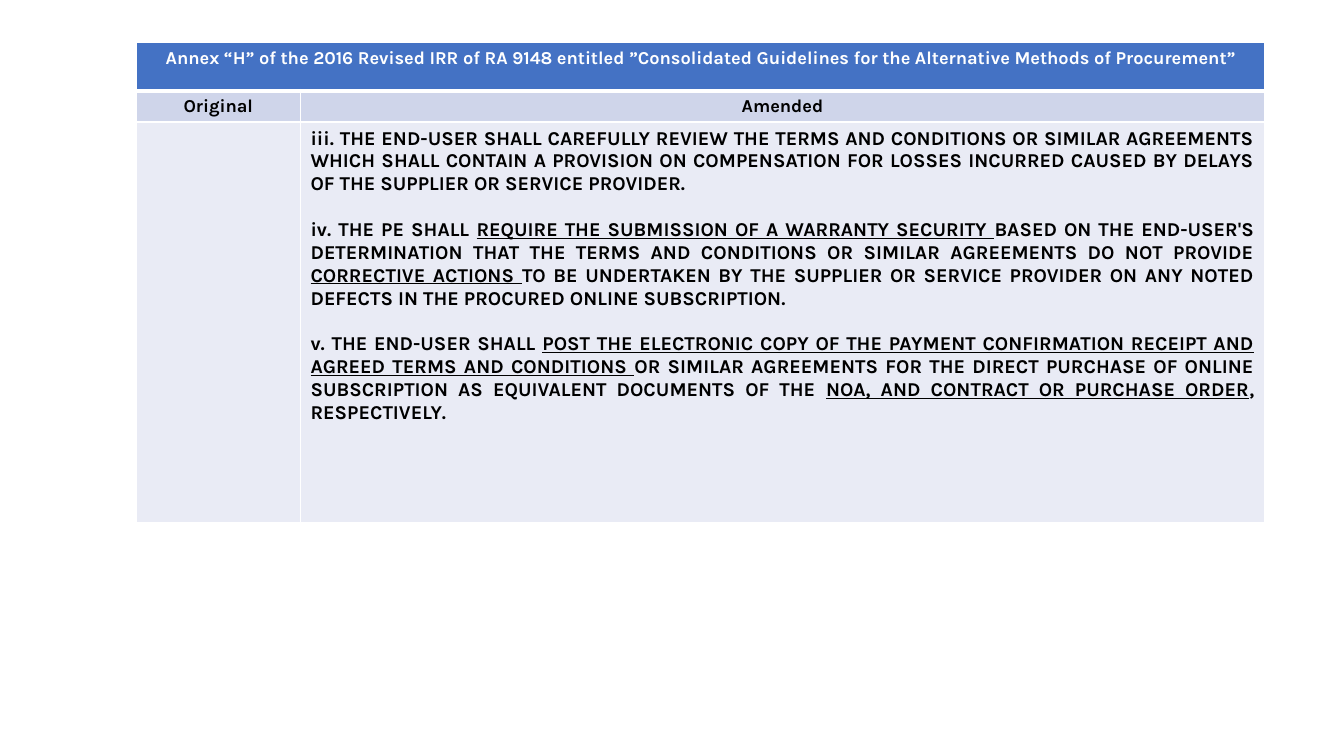
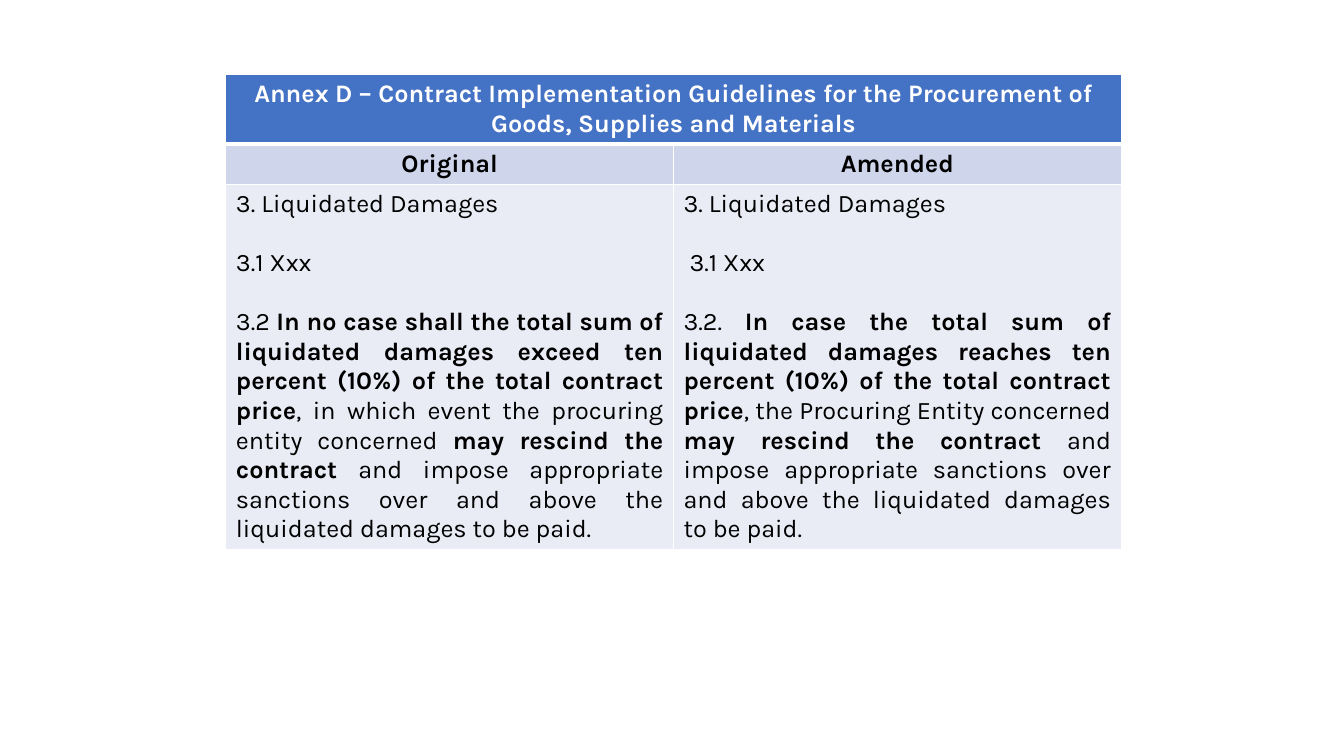
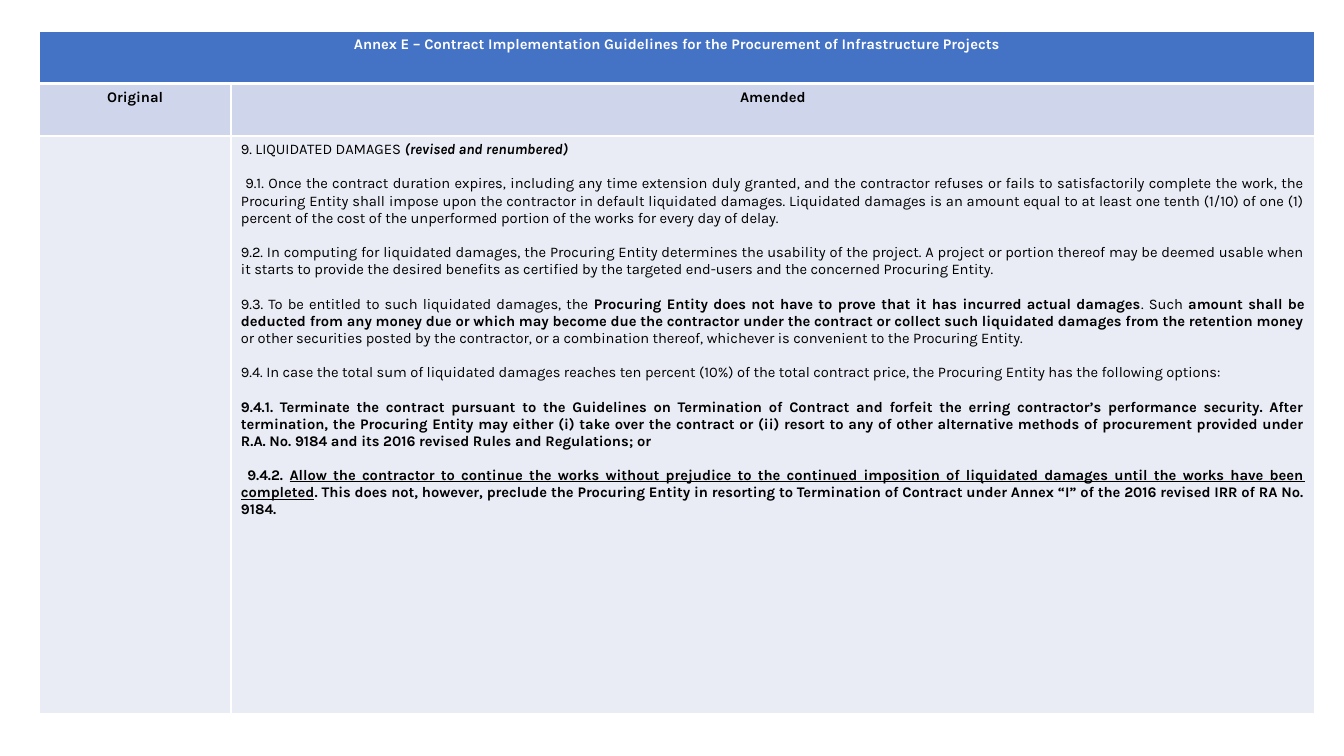
import pptx
import pptx.dml.color
import pptx.enum.text
import pptx.oxml
import pptx.oxml.ns
import pptx.util

Inches = pptx.util.Inches
Pt = pptx.util.Pt
RGBColor = pptx.dml.color.RGBColor
PP_ALIGN = pptx.enum.text.PP_ALIGN

WHITE = RGBColor(0xFF, 0xFF, 0xFF)
BLACK = RGBColor(0x00, 0x00, 0x00)
BANNER_BLUE = RGBColor(0x44, 0x72, 0xC4)
HEADING_BLUE = RGBColor(0xCF, 0xD5, 0xEA)
BODY_BLUE = RGBColor(0xE9, 0xEB, 0xF5)
FONT = "Karla"
LINE_HEIGHT = 1.17
THIN, THICK = 1, 3

ONLINE_SUBSCRIPTION = [
    [("iii. THE END-USER SHALL CAREFULLY REVIEW THE TERMS AND CONDITIONS OR SIMILAR AGREEMENTS "
      "WHICH SHALL CONTAIN A PROVISION ON COMPENSATION FOR LOSSES INCURRED CAUSED BY DELAYS "
      "OF THE SUPPLIER OR SERVICE PROVIDER.", "b")],
    [("iv. THE PE SHALL ", "b"),
     ("REQUIRE THE SUBMISSION OF A WARRANTY SECURITY ", "bu"),
     ("BASED ON THE END-USER'S DETERMINATION THAT THE TERMS AND CONDITIONS OR SIMILAR "
      "AGREEMENTS DO NOT PROVIDE ", "b"),
     ("CORRECTIVE ACTIONS ", "bu"),
     ("TO BE UNDERTAKEN BY THE SUPPLIER OR SERVICE PROVIDER ON ANY NOTED DEFECTS IN THE "
      "PROCURED ONLINE SUBSCRIPTION.", "b")],
    [("v. THE END-USER SHALL ", "b"),
     ("POST THE ELECTRONIC COPY OF THE PAYMENT CONFIRMATION RECEIPT AND AGREED TERMS AND "
      "CONDITIONS ", "bu"),
     ("OR SIMILAR AGREEMENTS FOR THE DIRECT PURCHASE OF ONLINE SUBSCRIPTION AS EQUIVALENT "
      "DOCUMENTS OF THE ", "b"),
     ("NOA, AND CONTRACT OR PURCHASE ORDER", "bu"),
     (", RESPECTIVELY.", "b")],
]

GOODS_ORIGINAL = [
    [("3. Liquidated Damages", "")],
    [("3.1 Xxx", "")],
    [("3.2 ", ""),
     ("In no case shall the total sum of liquidated damages exceed ten percent (10%) of the "
      "total contract price", "b"),
     (", in which event the procuring entity concerned ", ""),
     ("may rescind the contract ", "b"),
     ("and impose appropriate sanctions over and above the liquidated damages to be paid.", "")],
]

GOODS_AMENDED = [
    [("3. Liquidated Damages", "")],
    [(" 3.1 Xxx", "")],
    [("3.2. ", ""),
     ("In case the total sum of liquidated damages reaches ten percent (10%) of the total "
      "contract price", "b"),
     (", the Procuring Entity concerned ", ""),
     ("may rescind the contract ", "b"),
     ("and impose appropriate sanctions over and above the liquidated damages to be paid.", "")],
]

INFRASTRUCTURE_AMENDED = [
    [("9. LIQUIDATED DAMAGES ", ""), ("(revised and renumbered)", "bi")],
    [(" 9.1. Once the contract duration expires, including any time extension duly granted, and "
      "the contractor refuses or fails to satisfactorily complete the work, the Procuring Entity "
      "shall impose upon the contractor in default liquidated damages. Liquidated damages is an "
      "amount equal to at least one tenth (1/10) of one (1) percent of the cost of the "
      "unperformed portion of the works for every day of delay.", "")],
    [("9.2. In computing for liquidated damages, the Procuring Entity determines the usability "
      "of the project. A project or portion thereof may be deemed usable when it starts to "
      "provide the desired benefits as certified by the targeted end-users and the concerned "
      "Procuring Entity.", "")],
    [("9.3. To be entitled to such liquidated damages, the ", ""),
     ("Procuring Entity does not have to prove that it has incurred actual damages", "b"),
     (". Such ", ""),
     ("amount shall be deducted from any money due or which may become due the contractor under "
      "the contract or collect such liquidated damages from the retention money ", "b"),
     ("or other securities posted by the contractor, or a combination thereof, whichever is "
      "convenient to the Procuring Entity.", "")],
    [("9.4. In case the total sum of liquidated damages reaches ten percent (10%) of the total "
      "contract price, the Procuring Entity has the following options:", "")],
    [("9.4.1. Terminate the contract pursuant to the Guidelines on Termination of Contract and "
      "forfeit the erring contractor’s performance security. After termination, the Procuring "
      "Entity may either (i) take over the contract or (ii) resort to any of other alternative "
      "methods of procurement provided under R.A. No. 9184 and its 2016 revised Rules and "
      "Regulations; or", "b")],
    [(" 9.4.2. ", "b"),
     ("Allow the contractor to continue the works without prejudice to the continued imposition "
      "of liquidated damages until the works have been completed", "bu"),
     (". This does not, however, preclude the Procuring Entity in resorting to Termination of "
      "Contract under Annex “I” of the 2016 revised IRR of RA No. 9184.", "b")],
]


def set_borders(cell, top, bottom):
    properties = cell._tc.get_or_add_tcPr()
    for side, width in (("L", THIN), ("R", THIN), ("T", top), ("B", bottom)):
        properties.append(pptx.oxml.parse_xml(
            f'<a:ln{side} {pptx.oxml.ns.nsdecls("a")} w="{Pt(width)}">'
            f'<a:solidFill><a:srgbClr val="{WHITE}"/></a:solidFill></a:ln{side}>'))


def write_clauses(cell, clauses, size, color, alignment):
    frame = cell.text_frame
    for index, clause in enumerate(clauses):
        paragraph = frame.add_paragraph() if index else frame.paragraphs[0]
        paragraph.alignment = alignment
        if index:
            paragraph.space_before = Pt(round(size * LINE_HEIGHT, 2))
        for text, style in clause:
            run = paragraph.add_run()
            run.text = text
            font = run.font
            font.name = FONT
            font.size = Pt(size)
            font.color.rgb = color
            font.bold = "b" in style
            font.italic = "i" in style
            font.underline = "u" in style


def add_comparison(deck, left, top, widths, heights, heading, original, amended,
                   heading_size, body_size):
    slide = deck.slides.add_slide(deck.slide_layouts[6])
    table = slide.shapes.add_table(
        3, 2, Inches(left), Inches(top), Inches(sum(widths)), Inches(sum(heights))).table
    for column, width in zip(table.columns, widths):
        column.width = Inches(width)
    for row, height in zip(table.rows, heights):
        row.height = Inches(height)
    table.cell(0, 0).merge(table.cell(0, 1))

    rows = [
        ([[[(heading, "b")]], []], BANNER_BLUE, WHITE, heading_size, PP_ALIGN.CENTER, THIN, THICK),
        ([[[("Original", "b")]], [[("Amended", "b")]]], HEADING_BLUE, BLACK, heading_size,
         PP_ALIGN.CENTER, THICK, THIN),
        ([original, amended], BODY_BLUE, BLACK, body_size, PP_ALIGN.JUSTIFY, THIN, THIN),
    ]
    for row, (contents, fill, color, size, alignment, above, below) in zip(table.rows, rows):
        for cell, clauses in zip(row.cells, contents):
            set_borders(cell, above, below)
            cell.fill.solid()
            cell.fill.fore_color.rgb = fill
            write_clauses(cell, clauses, size, color, alignment)


def main():
    deck = pptx.Presentation()
    deck.slide_width = Inches(13.33)
    deck.slide_height = Inches(7.5)
    add_comparison(
        deck, 1.35, 0.42, (1.63, 9.56), (0.48, 0.3, 3.97),
        "Annex “H” of the 2016 Revised IRR of RA 9148 entitled ”Consolidated Guidelines for the "
        "Alternative Methods of Procurement”",
        [], ONLINE_SUBSCRIPTION, 13, 14)
    add_comparison(
        deck, 2.24, 0.74, (4.44, 4.44), (0.69, 0.4, 3.62),
        "Annex D – Contract Implementation Guidelines for the Procurement of Goods, Supplies and "
        "Materials",
        GOODS_ORIGINAL, GOODS_AMENDED, 18, 18)
    add_comparison(
        deck, 0.39, 0.31, (1.9, 10.75), (0.52, 0.52, 5.73),
        "Annex E – Contract Implementation Guidelines for the Procurement of Infrastructure "
        "Projects",
        [], INFRASTRUCTURE_AMENDED, 10.5, 10.5)
    deck.save("out.pptx")


if __name__ == "__main__":
    main()
